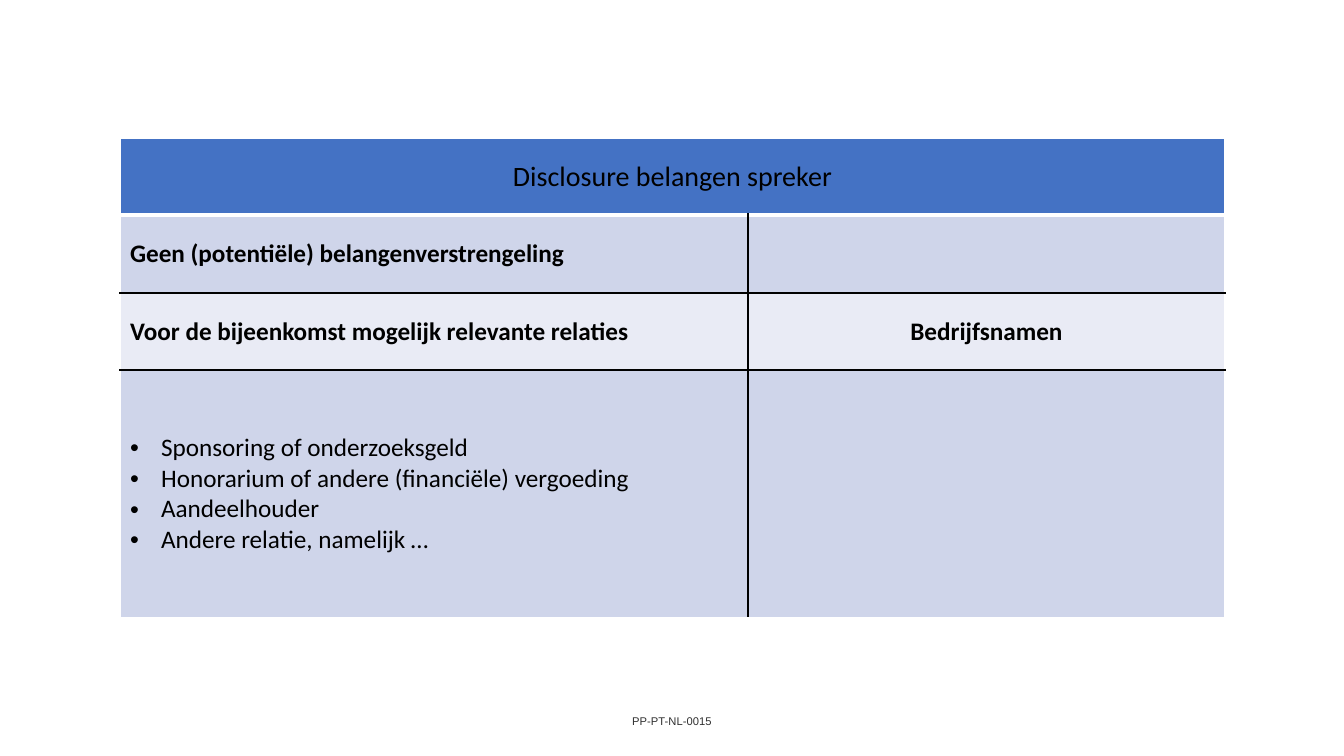
import dataclasses

import lxml.etree
import pptx
import pptx.dml.color
import pptx.enum.text
import pptx.oxml.ns
import pptx.presentation
import pptx.slide
import pptx.table
import pptx.text.text
import pptx.util

PX_PER_INCH = 100.8
WHITE, BLACK = "FFFFFF", "000000"
HEADER_BLUE, BAND_DARK, BAND_LIGHT = "4472C4", "CFD5EA", "E9EBF5"
COLUMN_WIDTHS = (628, 477)
ROW_HEIGHTS = (77, 78, 77, 248)
BULLET_INDENT = 31
CENTER = pptx.enum.text.PP_ALIGN.CENTER
MIDDLE = pptx.enum.text.MSO_ANCHOR.MIDDLE


@dataclasses.dataclass(frozen=True)
class Border:
    """Colour and width in points of one cell edge."""

    color: str
    points: int = 1


@dataclasses.dataclass(frozen=True)
class CellContent:
    """Lines of text in a table cell and their look."""

    row: int
    column: int
    fill: str
    lines: tuple[str, ...] = ()
    size: int = 18
    bold: bool = False
    centered: bool = False
    bulleted: bool = False


DISCLOSURE_CELLS = (
    CellContent(0, 0, HEADER_BLUE, ("Disclosure belangen spreker",), size=20, centered=True),
    CellContent(0, 1, HEADER_BLUE),
    CellContent(1, 0, BAND_DARK, ("Geen (potentiële) belangenverstrengeling",), bold=True),
    CellContent(1, 1, BAND_DARK),
    CellContent(2, 0, BAND_LIGHT, ("Voor de bijeenkomst mogelijk relevante relaties",), bold=True),
    CellContent(2, 1, BAND_LIGHT, ("Bedrijfsnamen",), bold=True, centered=True),
    CellContent(
        3,
        0,
        BAND_DARK,
        (
            "Sponsoring of onderzoeksgeld",
            "Honorarium of andere (financiële) vergoeding",
            "Aandeelhouder",
            "Andere relatie, namelijk …",
        ),
        bulleted=True,
    ),
    CellContent(3, 1, BAND_DARK),
)


def px(length: int) -> pptx.util.Emu:
    """Turn whole pixels into EMU."""
    return pptx.util.Emu(round(length * 914400 / PX_PER_INCH))


def rgb(color: str) -> pptx.dml.color.RGBColor:
    """Turn a hex string into a colour."""
    return pptx.dml.color.RGBColor.from_string(color)


def write_line(
    paragraph: pptx.text.text._Paragraph, text: str, color: str, font_format: dict[str, object]
) -> None:
    """Add one formatted run to a paragraph."""
    run = paragraph.add_run()
    run.text = text
    run.font.color.rgb = rgb(color)
    for attribute, value in font_format.items():
        setattr(run.font, attribute, value)


def add_bullet(paragraph: pptx.text.text._Paragraph) -> None:
    """Give a paragraph a hanging round bullet."""
    properties = paragraph._p.get_or_add_pPr()
    properties.set("marL", str(px(BULLET_INDENT)))
    properties.set("indent", str(-px(BULLET_INDENT)))
    for tag, attribute, value in (("a:buFont", "typeface", "Arial"), ("a:buChar", "char", "•")):
        lxml.etree.SubElement(properties, pptx.oxml.ns.qn(tag)).set(attribute, value)


def cell_borders(row: int, column: int) -> dict[str, Border]:
    """Work out the four edges of a cell from its place in the grid."""
    last_row, last_column = len(ROW_HEIGHTS) - 1, len(COLUMN_WIDTHS) - 1
    bottom = Border(BLACK if row < last_row else WHITE)
    return {
        "a:lnL": Border(BLACK if row and column else WHITE),
        "a:lnR": Border(BLACK if row and column < last_column else WHITE),
        "a:lnT": Border(BLACK if row > 1 else WHITE),
        "a:lnB": bottom if row else Border(WHITE, 3),
    }


def draw_borders(cell: pptx.table._Cell, borders: dict[str, Border]) -> None:
    """Put border lines ahead of the fill in the cell properties."""
    properties = cell._tc.get_or_add_tcPr()
    for position, (tag, border) in enumerate(borders.items()):
        line = lxml.etree.Element(pptx.oxml.ns.qn(tag), w=str(pptx.util.Pt(border.points)))
        solid = lxml.etree.SubElement(line, pptx.oxml.ns.qn("a:solidFill"))
        lxml.etree.SubElement(solid, pptx.oxml.ns.qn("a:srgbClr")).set("val", border.color)
        properties.insert(position, line)


def fill_cell(table: pptx.table.Table, content: CellContent) -> None:
    """Write and format one table cell."""
    cell = table.cell(content.row, content.column)
    cell.vertical_anchor = MIDDLE
    cell.fill.solid()
    cell.fill.fore_color.rgb = rgb(content.fill)
    draw_borders(cell, cell_borders(content.row, content.column))
    font_format = {
        "name": "Calibri",
        "size": pptx.util.Pt(content.size),
        "bold": content.bold,
    }
    for index, text in enumerate(content.lines):
        frame = cell.text_frame
        paragraph = frame.add_paragraph() if index else frame.paragraphs[0]
        if content.centered:
            paragraph.alignment = CENTER
        if content.bulleted:
            add_bullet(paragraph)
        write_line(paragraph, text, BLACK, font_format)


def add_disclosure_table(slide: pptx.slide.Slide) -> None:
    """Draw the table of the speaker's interests."""
    table = slide.shapes.add_table(
        len(ROW_HEIGHTS),
        len(COLUMN_WIDTHS),
        px(120),
        px(138),
        px(sum(COLUMN_WIDTHS)),
        px(sum(ROW_HEIGHTS)),
    ).table
    for column, width in zip(table.columns, COLUMN_WIDTHS):
        column.width = px(width)
    for row, height in zip(table.rows, ROW_HEIGHTS):
        row.height = px(height)
    table.cell(0, 0).merge(table.cell(0, len(COLUMN_WIDTHS) - 1))
    for content in DISCLOSURE_CELLS:
        fill_cell(table, content)


def add_document_code(slide: pptx.slide.Slide) -> None:
    """Write the document code at the foot of the slide."""
    frame = slide.shapes.add_textbox(px(445), px(701), px(454), px(40)).text_frame
    for attribute, value in {"word_wrap": True, "vertical_anchor": MIDDLE}.items():
        setattr(frame, attribute, value)
    paragraph = frame.paragraphs[0]
    paragraph.alignment = CENTER
    write_line(paragraph, "PP-PT-NL-0015", "303030", {"name": "Arial", "size": pptx.util.Pt(8)})


def main() -> None:
    """Build and save the disclosure slide."""
    presentation = pptx.Presentation()
    presentation.slide_width, presentation.slide_height = px(1344), px(756)
    slide = presentation.slides.add_slide(presentation.slide_layouts[6])
    add_disclosure_table(slide)
    add_document_code(slide)
    presentation.save("out.pptx")


if __name__ == "__main__":
    main()
